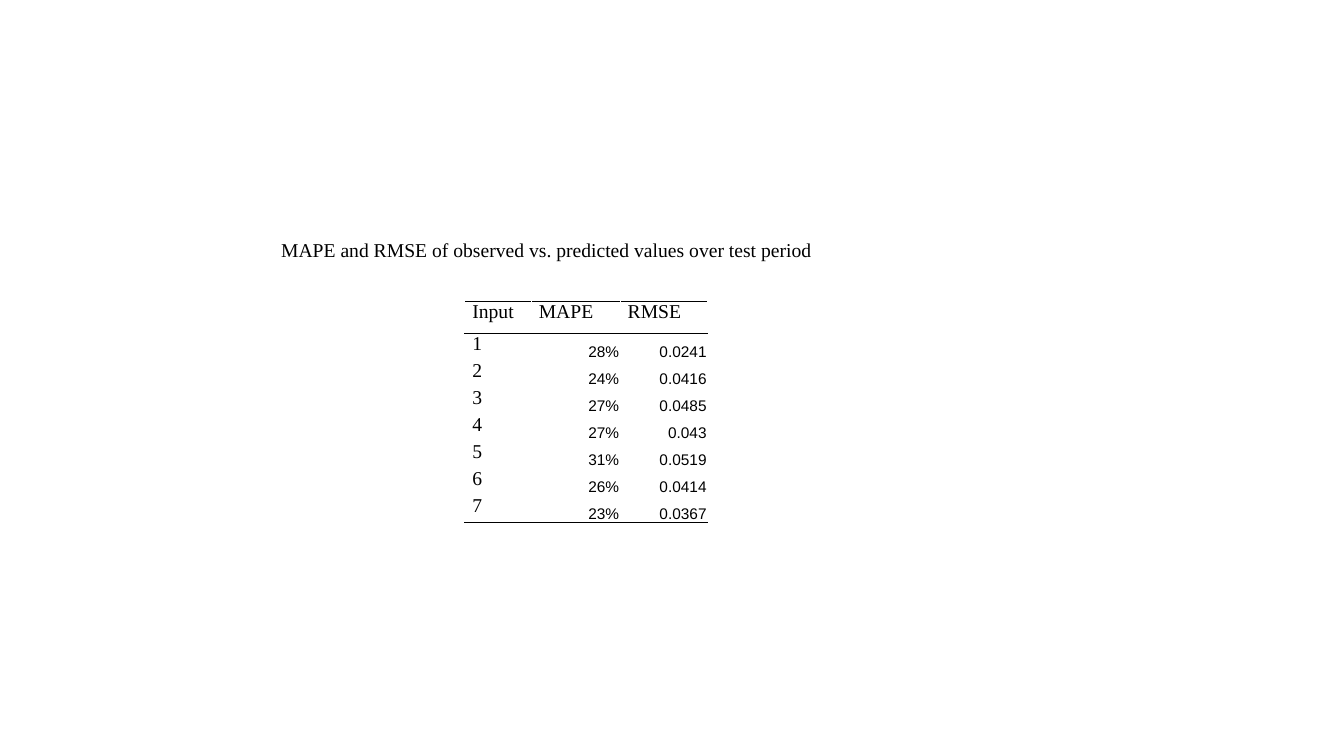
"""Build a slide with a caption and a table of MAPE and RMSE per input."""
from lxml import etree
from pptx import Presentation
from pptx.dml.color import RGBColor
from pptx.enum.text import MSO_ANCHOR, MSO_AUTO_SIZE, PP_ALIGN
from pptx.oxml.ns import qn
from pptx.util import Pt

TOP, MIDDLE, BOTTOM = MSO_ANCHOR.TOP, MSO_ANCHOR.MIDDLE, MSO_ANCHOR.BOTTOM
LEFT, RIGHT = PP_ALIGN.LEFT, PP_ALIGN.RIGHT
FIT_SHAPE = MSO_AUTO_SIZE.SHAPE_TO_FIT_TEXT
BLACK, WHITE = "000000", "FFFFFF"


def set_font(paragraph, name, size):
    paragraph.font.name = name
    paragraph.font.size = Pt(size)
    paragraph.font.color.rgb = RGBColor.from_string(BLACK)


def set_borders(cell, colours):
    properties = cell._tc.get_or_add_tcPr()
    for position, (side, colour) in enumerate(colours.items()):
        line = etree.Element(qn(f"a:ln{side}"), w=str(Pt(1)))
        fill = etree.SubElement(line, qn("a:solidFill"))
        etree.SubElement(fill, qn("a:srgbClr"), val=colour)
        properties.insert(position, line)


presentation = Presentation()
presentation.slide_width, presentation.slide_height = Pt(960), Pt(540)
slide = presentation.slides.add_slide(presentation.slide_layouts[6])

results = [
    ("Input", "MAPE", "RMSE"),
    ("1", "28%", "0.0241"),
    ("2", "24%", "0.0416"),
    ("3", "27%", "0.0485"),
    ("4", "27%", "0.043"),
    ("5", "31%", "0.0519"),
    ("6", "26%", "0.0414"),
    ("7", "23%", "0.0367"),
]
column_widths = [47.5, 63.5, 62.5]
row_heights = [22.9] + [19.3] * 7
last_row = len(results) - 1

table = slide.shapes.add_table(
    len(results), len(column_widths), Pt(332), Pt(215.2),
    Pt(sum(column_widths)), Pt(sum(row_heights))).table
table.first_row = table.horz_banding = False
for column, width in zip(table.columns, column_widths):
    column.width = Pt(width)

for row_index, values in enumerate(results):
    table.rows[row_index].height = Pt(row_heights[row_index])
    for column_index, value in enumerate(values):
        cell = table.cell(row_index, column_index)
        cell.text = value
        cell.fill.background()
        paragraph = cell.text_frame.paragraphs[0]
        cell.margin_bottom = 0
        if row_index == 0 or column_index == 0:
            cell.margin_left = cell.margin_right = Pt(5.4)
            cell.margin_top = 0
            cell.vertical_anchor = TOP
            paragraph.alignment = LEFT
            paragraph.space_before = paragraph.space_after = Pt(3)
            set_font(paragraph, "Times New Roman", 14)
        else:
            cell.margin_left = cell.margin_right = cell.margin_top = Pt(0.7)
            cell.vertical_anchor = BOTTOM
            paragraph.alignment = RIGHT
            set_font(paragraph, "Arial", 11)
        set_borders(cell, {
            "L": WHITE,
            "R": WHITE,
            "T": BLACK if row_index in (0, 1) else WHITE,
            "B": BLACK if row_index in (0, last_row) else WHITE,
        })

caption = slide.shapes.add_textbox(Pt(193.7), Pt(166.5), Pt(396.7), Pt(24.2)).text_frame
caption.text = "MAPE and RMSE of observed vs. predicted values over test period"
caption.word_wrap = False
caption.auto_size = FIT_SHAPE
caption.vertical_anchor = MIDDLE
set_font(caption.paragraphs[0], "Times New Roman", 14)

presentation.save("out.pptx")
